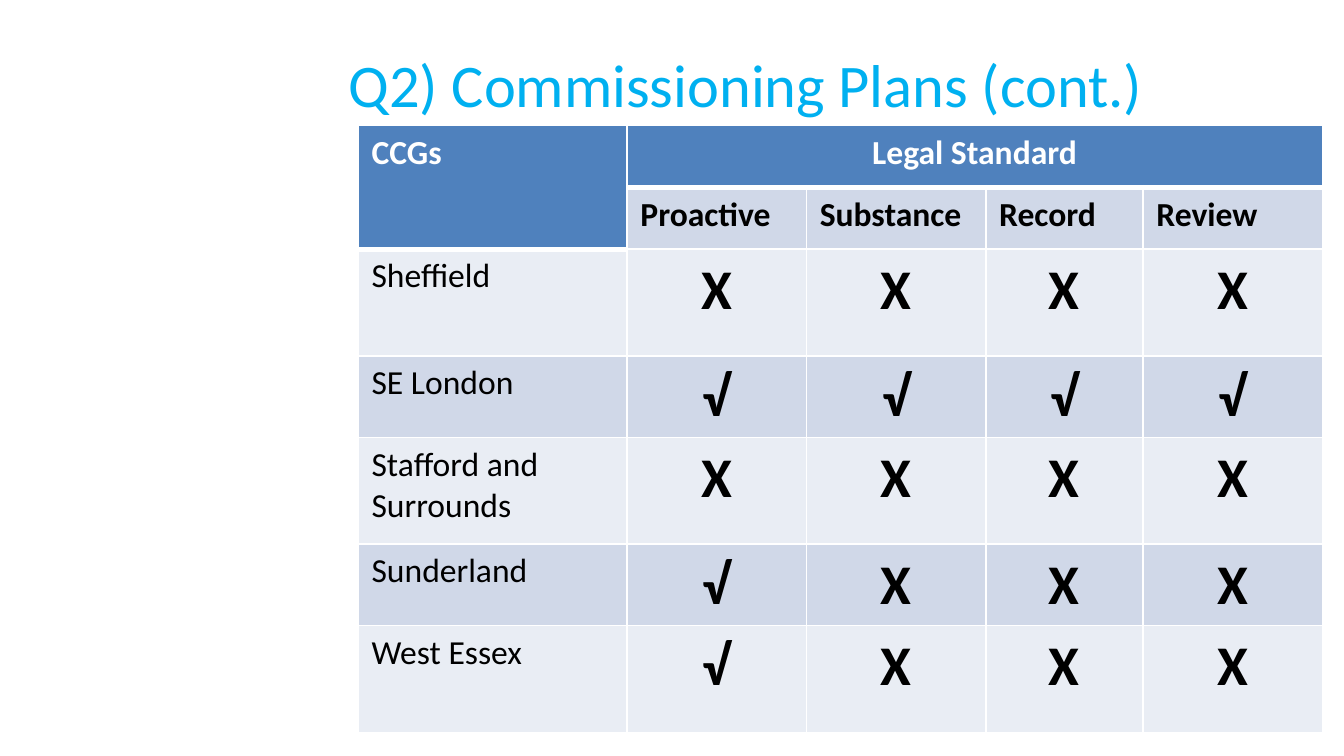
from dataclasses import dataclass

from lxml.etree import SubElement
from pptx import Presentation
from pptx.dml.color import RGBColor
from pptx.enum.text import MSO_ANCHOR as Anchor, PP_ALIGN as Align
from pptx.oxml.ns import qn
from pptx.util import Pt

SCALE = 4572  # EMU per px, 200 px to the inch


@dataclass(frozen=True)
class Theme:
    font: str = "Calibri"
    title: str = "00B0F0"
    header: str = "4F81BD"
    light: str = "E9EDF4"
    dark: str = "D0D8E8"
    white: str = "FFFFFF"
    black: str = "000000"
    title_size: float = 32.4
    text_size: float = 18
    mark_size: float = 30
    line: float = 1
    header_line: float = 3


@dataclass(frozen=True)
class CellStyle:
    fill: str
    color: str
    size: float
    bold: bool
    align: Align = Align.LEFT
    top: float = 1
    bottom: float = 1


@dataclass(frozen=True)
class Group:
    name: str
    marks: str  # one mark per legal standard


THEME = Theme()
STANDARDS = ["Proactive", "Substance", "Record", "Review"]
GROUPS = [
    Group("Sheffield", "XXXX"),
    Group("SE London", "√√√√"),
    Group("Stafford and Surrounds", "XXXX"),
    Group("Sunderland", "√XXX"),
    Group("West Essex", "√XXX"),
]
COLUMNS = [400, 267, 267, 234, 267]
HEADER_ROW, TALL_ROW, SHORT_ROW = 92, 159, 121


def px(length: int) -> int:
    return length * SCALE


def write(para, text: str, size: float, color: str, bold: bool, align: Align) -> None:
    para.text = text
    para.alignment = align
    para.font.name = THEME.font
    para.font.size = Pt(size)
    para.font.bold = bold
    para.font.color.rgb = RGBColor.from_string(color)


def draw_borders(cell, top: float, bottom: float) -> None:
    properties = cell._tc.get_or_add_tcPr()
    widths = {"a:lnL": THEME.line, "a:lnR": THEME.line, "a:lnT": top, "a:lnB": bottom}
    for tag, width in widths.items():
        line = SubElement(properties, qn(tag), w=str(Pt(width)))
        fill = SubElement(line, qn("a:solidFill"))
        SubElement(fill, qn("a:srgbClr"), val=THEME.white)


def fill_cell(cell, text: str, style: CellStyle) -> None:
    draw_borders(cell, style.top, style.bottom)
    cell.fill.solid()
    cell.fill.fore_color.rgb = RGBColor.from_string(style.fill)
    write(cell.text_frame.paragraphs[0], text, style.size, style.color,
          style.bold, style.align)


def draw_title(page, text: str) -> None:
    box = page.shapes.add_textbox(px(499), px(61), px(1336), px(126))
    frame = box.text_frame
    frame.word_wrap = True
    frame.vertical_anchor = Anchor.MIDDLE
    write(frame.paragraphs[0], text, THEME.title_size, THEME.title, False, Align.LEFT)


def draw_table(page) -> None:
    heights = [HEADER_ROW] * 2
    heights += [SHORT_ROW if index % 2 else TALL_ROW for index in range(len(GROUPS))]
    table = page.shapes.add_table(len(heights), len(COLUMNS), px(533), px(187),
                                  px(sum(COLUMNS)), px(sum(heights))).table
    for column, width in zip(table.columns, COLUMNS):
        column.width = px(width)
    for row, height in zip(table.rows, heights):
        row.height = px(height)

    # Header: two merged cells above the names of the standards
    def header(align: Align) -> CellStyle:
        return CellStyle(THEME.header, THEME.white, THEME.text_size, True, align,
                         bottom=THEME.header_line)

    for column in range(len(COLUMNS)):
        text = {0: "CCGs", 1: "Legal Standard"}.get(column, "")
        fill_cell(table.cell(0, column), text, header(Align.CENTER if column else Align.LEFT))
    fill_cell(table.cell(1, 0), "", header(Align.LEFT))
    standard = CellStyle(THEME.dark, THEME.black, THEME.text_size, True,
                         top=THEME.header_line)
    for column, name in enumerate(STANDARDS, 1):
        fill_cell(table.cell(1, column), name, standard)
    table.cell(0, 0).merge(table.cell(1, 0))
    table.cell(0, 1).merge(table.cell(0, len(STANDARDS)))

    # Body: banded rows of names and marks
    for index, group in enumerate(GROUPS):
        band = THEME.dark if index % 2 else THEME.light
        name_top = THEME.line if index else THEME.header_line
        fill_cell(table.cell(index + 2, 0), group.name,
                  CellStyle(band, THEME.black, THEME.text_size, False, top=name_top))
        mark_style = CellStyle(band, THEME.black, THEME.mark_size, True, Align.CENTER)
        for column, mark in enumerate(group.marks, 1):
            fill_cell(table.cell(index + 2, column), mark, mark_style)


def main() -> None:
    deck = Presentation()
    deck.slide_width, deck.slide_height = px(2000), px(1125)
    page = deck.slides.add_slide(deck.slide_layouts[6])
    draw_title(page, "Q2) Commissioning Plans (cont.)")
    draw_table(page)
    deck.save("out.pptx")


if __name__ == "__main__":
    main()
